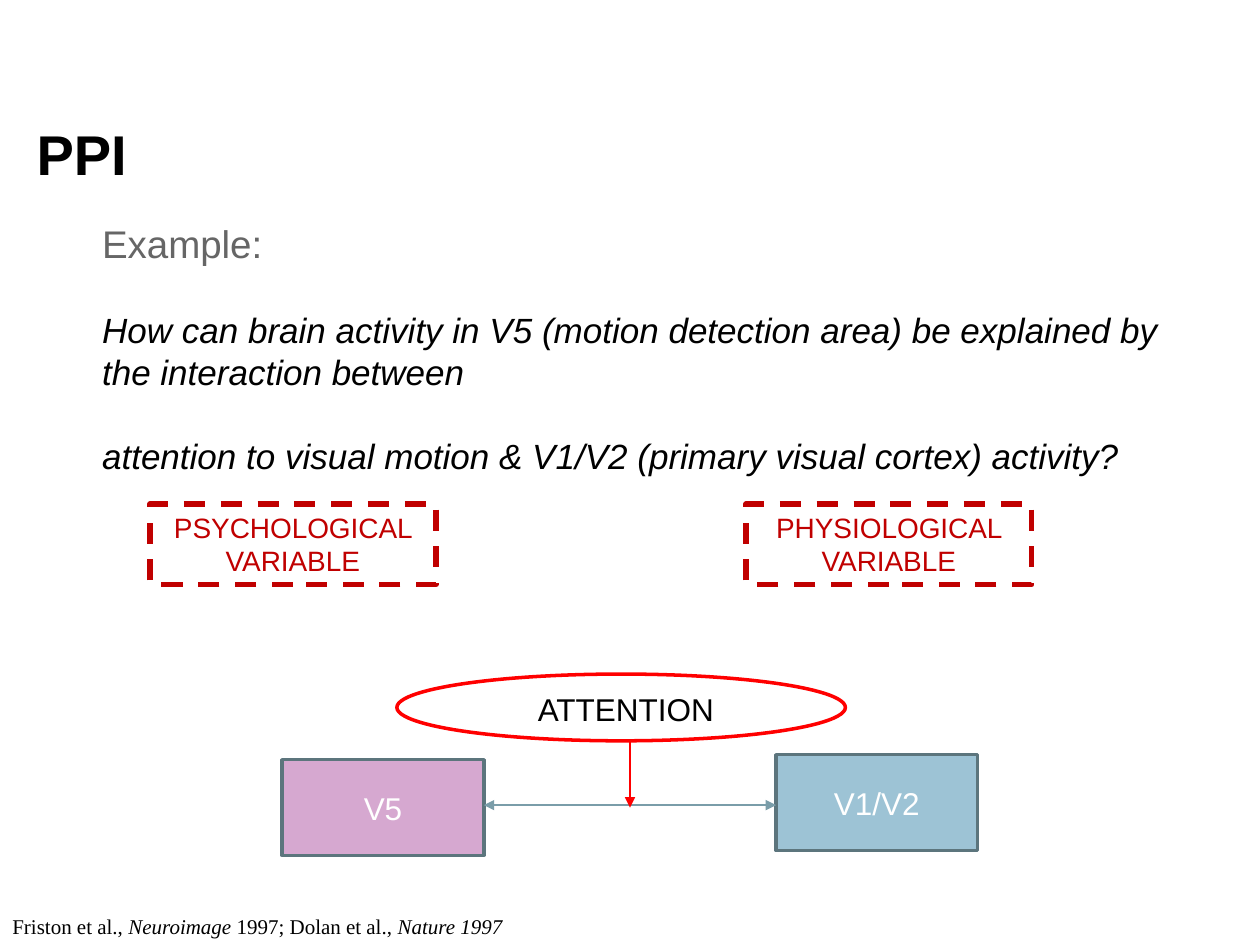
from lxml import etree
from pptx import Presentation
from pptx.dml.color import RGBColor
from pptx.enum.dml import MSO_LINE
from pptx.enum.shapes import MSO_CONNECTOR, MSO_SHAPE
from pptx.enum.text import MSO_ANCHOR, MSO_AUTO_SIZE, PP_ALIGN
from pptx.oxml.ns import qn
from pptx.util import Inches, Pt

RECTANGLE, ELLIPSE = MSO_SHAPE.RECTANGLE, MSO_SHAPE.OVAL
STRAIGHT, DASH = MSO_CONNECTOR.STRAIGHT, MSO_LINE.DASH
LEFT, CENTER = PP_ALIGN.LEFT, PP_ALIGN.CENTER
TOP, MIDDLE, BOTTOM = MSO_ANCHOR.TOP, MSO_ANCHOR.MIDDLE, MSO_ANCHOR.BOTTOM
NO_AUTOFIT = MSO_AUTO_SIZE.NONE

COLORS = {
    "text": "000000", "muted": "666666", "white": "FFFFFF",
    "variable": "C00000", "attention": "FF0000", "region_line": "5C757D",
    "v5": "AE53A2", "v1_v2": "3D89AD", "pathway": "7A9DA9",
}


def rgb(name):
    return RGBColor.from_string(COLORS[name])


class SlideBuilder:
    def __init__(self, slide, font="Arial"):
        self.slide = slide
        self.font = font

    def style(self, paragraph, size, color="text", bold=False, italic=False, font=None):
        paragraph.font.name = font or self.font
        paragraph.font.size = Pt(size)
        paragraph.font.bold = bold
        paragraph.font.italic = italic
        paragraph.font.color.rgb = rgb(color)

    def place(self, shape, box, anchor):
        shape.left, shape.top, shape.width, shape.height = map(Inches, box)
        frame = shape.text_frame
        frame.word_wrap = True
        frame.auto_size = NO_AUTOFIT
        frame.vertical_anchor = anchor
        return frame

    def title(self, text, box):
        frame = self.place(self.slide.shapes.title, box, BOTTOM)
        frame.text = text
        paragraph = frame.paragraphs[0]
        paragraph.alignment = LEFT
        self.style(paragraph, 32, bold=True)

    def body(self, items, box):
        """Fill the body placeholder with (text, style) items, without bullets."""
        frame = self.place(self.slide.placeholders[1], box, TOP)
        for index, (text, style) in enumerate(items):
            paragraph = frame.add_paragraph() if index else frame.paragraphs[0]
            paragraph.text = text
            properties = paragraph._p.get_or_add_pPr()
            properties.set("marL", str(Inches(0.44)))
            properties.set("indent", "0")
            etree.SubElement(properties, qn("a:buNone"))
            paragraph.space_before = Pt(24 if index else 0)
            paragraph.line_spacing = 1.0
            self.style(paragraph, **style)

    def text(self, runs, box, size, font=None):
        """Add a text box from (text, italic) runs."""
        shape = self.slide.shapes.add_textbox(*map(Inches, box))
        paragraph = self.place(shape, box, TOP).paragraphs[0]
        self.style(paragraph, size, font=font)
        for text, italic in runs:
            run = paragraph.add_run()
            run.text = text
            if italic:
                run.font.italic = True

    def shape(self, kind, box, line, width, fill=None, dash=None):
        shape = self.slide.shapes.add_shape(kind, *map(Inches, box))
        shape.shadow.inherit = False
        shape.line.color.rgb = rgb(line)
        shape.line.width = Pt(width)
        if dash:
            shape.line.dash_style = dash
        if fill:
            shape.fill.solid()
            shape.fill.fore_color.rgb = rgb(fill)
            color = shape.fill._xPr.find(".//" + qn("a:srgbClr"))
            etree.SubElement(color, qn("a:alpha"), val="50000")
        else:
            shape.fill.background()
        return shape

    def labelled_box(self, text, box, size, color, anchor, **outline):
        shape = self.shape(RECTANGLE, box, **outline)
        frame = self.place(shape, box, anchor)
        frame.text = text
        paragraph = frame.paragraphs[0]
        paragraph.alignment = CENTER
        self.style(paragraph, size, color)

    def arrow(self, start, end, color, both_ends=False):
        connector = self.slide.shapes.add_connector(STRAIGHT, *map(Inches, start + end))
        connector.line.color.rgb = rgb(color)
        connector.line.width = Pt(0.75)
        line = connector.line._get_or_add_ln()
        for tag in ("a:headEnd", "a:tailEnd") if both_ends else ("a:tailEnd",):
            etree.SubElement(line, qn(tag), type="triangle")
        etree.SubElement(connector._element.spPr, qn("a:effectLst"))


def main():
    presentation = Presentation()
    presentation.slide_width, presentation.slide_height = Inches(10), Inches(7.5)
    slide = presentation.slides.add_slide(presentation.slide_layouts[1])
    builder = SlideBuilder(slide)

    builder.title("PPI", (0.19, 0.83, 9.02, 0.7))
    question = {"size": 20, "italic": True}
    builder.body([
        ("Example:", {"size": 22, "color": "muted"}),
        ("How can brain activity in V5 (motion detection area) be explained by "
         "the interaction between", question),
        ("attention to visual motion & V1/V2 (primary visual cortex) activity?", question),
    ], (0.27, 1.7, 9.38, 3.14))

    for text, left in (("PSYCHOLOGICAL VARIABLE", 1.19), ("PHYSIOLOGICAL VARIABLE", 5.92)):
        builder.labelled_box(text, (left, 4, 2.27, 0.64), 16, "variable", TOP,
                             line="variable", width=3, dash=DASH)

    builder.shape(ELLIPSE, (3.15, 5.35, 3.56, 0.53), "attention", 2)
    for text, left, top, fill in (("V5", 2.24, 6.03, "v5"), ("V1/V2", 6.16, 5.99, "v1_v2")):
        builder.labelled_box(text, (left, top, 1.6, 0.76), 18, "white", MIDDLE,
                             line="region_line", width=2, fill=fill)
    builder.arrow((3.84, 6.39), (6.16, 6.39), "pathway", both_ends=True)
    builder.arrow((5, 5.88), (5, 6.41), "attention")
    builder.text([("ATTENTION", False)], (4.17, 5.43, 1.98, 0.4), 18)

    builder.text([("Friston et al., ", False), ("Neuroimage ", True),
                  ("1997; Dolan et al., ", False), ("Nature 1997", True)],
                 (0, 7.2, 4.4, 0.3), 12, font="Times New Roman")
    presentation.save("out.pptx")


if __name__ == "__main__":
    main()
